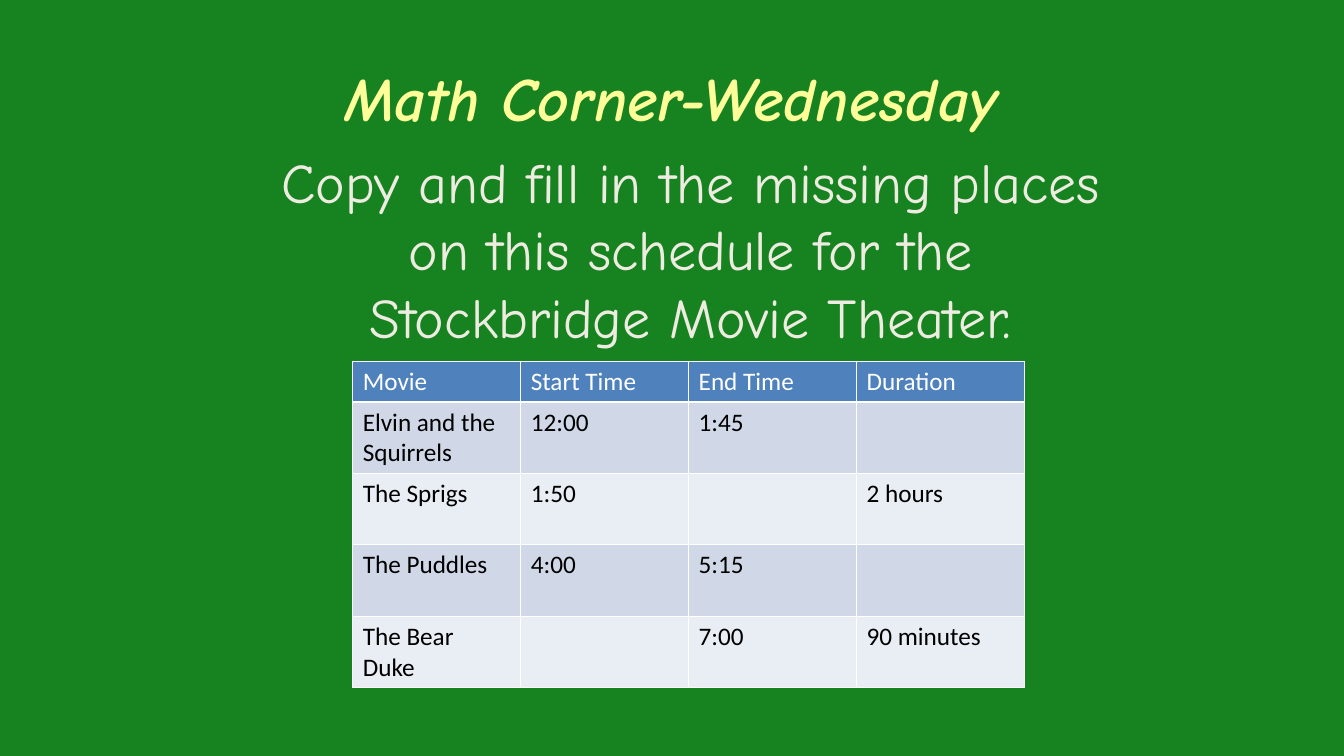
import pptx
import pptx.dml.color
import pptx.enum.text
import pptx.util

Cm = pptx.util.Cm
CENTER = pptx.enum.text.PP_ALIGN.CENTER
ANCHOR = pptx.enum.text.MSO_ANCHOR

SCHEDULE = [
    ("Movie", "Start Time", "End Time", "Duration"),
    ("Elvin and the Squirrels", "12:00", "1:45", ""),
    ("The Sprigs", "1:50", "", "2 hours"),
    ("The Puddles", "4:00", "5:15", ""),
    ("The Bear Duke", "", "7:00", "90 minutes"),
]


def color(value):
    return pptx.dml.color.RGBColor.from_string(value)


def fill_with(target, value):
    target.fill.solid()
    target.fill.fore_color.rgb = color(value)


def style_font(para, name, size, value, bold=False, italic=False):
    para.font.name = name
    para.font.size = pptx.util.Pt(size)
    para.font.color.rgb = color(value)
    para.font.bold = bold
    para.font.italic = italic


def add_title(page, left, top, width, height):
    title = page.shapes.title
    title.left, title.top = Cm(left), Cm(top)
    title.width, title.height = Cm(width), Cm(height)
    title.text_frame.vertical_anchor = ANCHOR.MIDDLE
    title.text_frame.text = "Math Corner-Wednesday"
    para = title.text_frame.paragraphs[0]
    para.alignment = CENTER
    style_font(para, "Comic Neue", 44, "FFFF99", bold=True, italic=True)


def add_instructions(page, left, top, width, height):
    box = page.shapes.add_textbox(Cm(left), Cm(top), Cm(width), Cm(height))
    frame = box.text_frame
    frame.word_wrap = True
    frame.vertical_anchor = ANCHOR.TOP
    frame.margin_left = Cm(1.2)
    frame.text = ("Copy and fill in the missing places on this schedule "
                  "for the Stockbridge Movie Theater.")
    para = frame.paragraphs[0]
    para.alignment = CENTER
    style_font(para, "Comic Neue", 40, "EEECE1")


def add_schedule(page, left, top, width, header_height, row_height):
    columns = len(SCHEDULE[0])
    height = header_height + row_height * (len(SCHEDULE) - 1)
    table = page.shapes.add_table(len(SCHEDULE), columns, Cm(left), Cm(top),
                                  Cm(width), Cm(height)).table
    for column in table.columns:
        column.width = Cm(width / columns)
    for index, entries in enumerate(SCHEDULE):
        is_header = index == 0
        table.rows[index].height = Cm(header_height if is_header else row_height)
        band = "4F81BD" if is_header else ("E9EDF4", "D0D8E8")[index % 2]
        for cell, entry in zip(table.rows[index].cells, entries):
            fill_with(cell, band)
            cell.text = entry
            style_font(cell.text_frame.paragraphs[0], "Calibri", 18,
                       "FFFFFF" if is_header else "000000")


def main():
    deck = pptx.Presentation()
    deck.slide_width, deck.slide_height = Cm(33.87), Cm(19.05)
    page = deck.slides.add_slide(deck.slide_layouts.get_by_name("Title Only"))
    fill_with(page.background, "168220")
    add_title(page, left=2.54, top=0.4, width=28.78, height=4.1)
    add_instructions(page, left=5.5, top=3.6, width=22.86, height=5.4)
    add_schedule(page, left=8.89, top=9.1, width=16.93,
                 header_height=1.03, row_height=1.8)
    deck.save("out.pptx")


if __name__ == "__main__":
    main()
